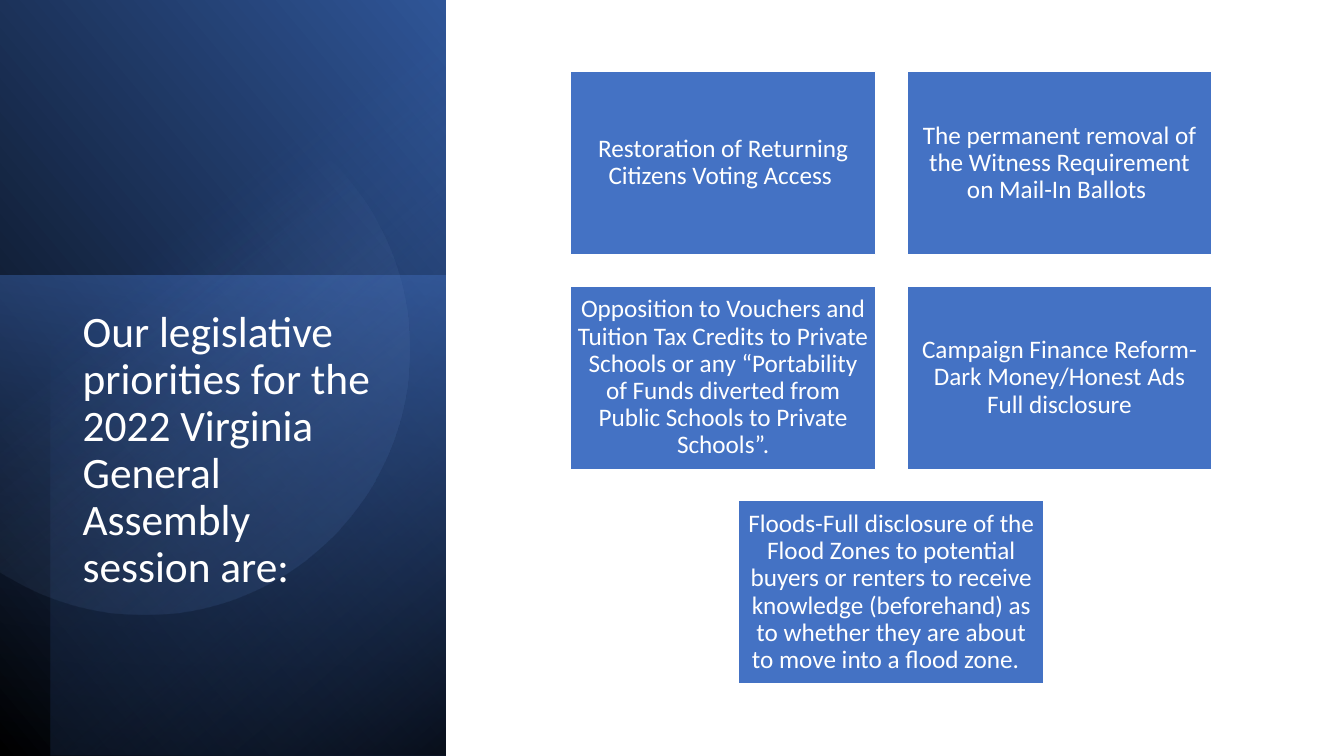
from dataclasses import dataclass
from math import acos, cos, sin

from lxml.etree import SubElement
from pptx import Presentation
from pptx.dml.color import RGBColor
from pptx.enum.shapes import MSO_SHAPE
from pptx.enum.text import MSO_ANCHOR, PP_ALIGN
from pptx.oxml.ns import qn
from pptx.util import Pt


@dataclass(frozen=True)
class Theme:
    font: str = "Calibri"
    title_size: float = 31
    card_size: float = 18
    line_spacing: float = 0.9
    white: str = "FFFFFF"
    black: str = "000000"
    blue: str = "4472C4"
    deep_blue: str = "2F5597"
    navy: str = "203864"
    pale_blue: str = "8FAADC"


class SlideBuilder:
    def __init__(self, slide, theme):
        self.shapes = slide.shapes
        self.theme = theme

    def gradient(self, shape, stops, angle):
        """Fill with (position, colour, opacity %) stops, angle clockwise."""
        shape.shadow.inherit = False
        shape.line.fill.background()
        shape.fill.gradient()
        shape.fill.gradient_angle = 360 - angle
        for stop, (position, colour, _) in zip(shape.fill.gradient_stops, stops):
            stop.position = position
            stop.color.rgb = RGBColor.from_string(colour)
        for node, (_, _, opacity) in zip(shape.element.spPr.iter(qn("a:srgbClr")), stops):
            if opacity < 100:
                SubElement(node, qn("a:alpha"), val=str(opacity * 1000))

    def gradient_panel(self, left, top, width, height, stops, angle):
        panel = self.shapes.add_shape(
            MSO_SHAPE.RECTANGLE, Pt(left), Pt(top), Pt(width), Pt(height))
        self.gradient(panel, stops, angle)

    def cut_circle(self, centre_x, centre_y, radius, stops, angle, steps=120):
        """Circle cut off by the left edge of the slide."""
        reach = acos(-centre_x / radius)
        turns = [reach * (2 * i / steps - 1) for i in range(steps + 1)]
        points = [(Pt(centre_x + radius * cos(t)), Pt(centre_y + radius * sin(t)))
                  for t in turns]
        outline = self.shapes.build_freeform(*points[0])
        outline.add_line_segments(points[1:], close=True)
        self.gradient(outline.convert_to_shape(), stops, angle)

    def set_text(self, frame, text, size, align):
        frame.word_wrap = True
        paragraph = frame.paragraphs[0]
        paragraph.text = text
        paragraph.alignment = align
        paragraph.line_spacing = self.theme.line_spacing
        paragraph.font.name = self.theme.font
        paragraph.font.size = Pt(size)
        paragraph.font.color.rgb = RGBColor.from_string(self.theme.white)

    def title(self, left, top, width, height, text):
        heading = self.shapes.add_textbox(Pt(left), Pt(top), Pt(width), Pt(height))
        self.set_text(heading.text_frame, text, self.theme.title_size, PP_ALIGN.LEFT)

    def card(self, left, top, width, height, text):
        card = self.shapes.add_shape(
            MSO_SHAPE.RECTANGLE, Pt(left), Pt(top), Pt(width), Pt(height))
        card.shadow.inherit = False
        card.fill.solid()
        card.fill.fore_color.rgb = RGBColor.from_string(self.theme.blue)
        card.line.color.rgb = RGBColor.from_string(self.theme.white)
        card.line.width = Pt(1)
        frame = card.text_frame
        frame.margin_left = frame.margin_right = Pt(5)
        frame.margin_top = frame.margin_bottom = Pt(5)
        frame.vertical_anchor = MSO_ANCHOR.MIDDLE
        self.set_text(frame, text, self.theme.card_size, PP_ALIGN.CENTER)


PRIORITIES = [
    "Restoration of Returning Citizens Voting Access ",
    "The permanent removal of the Witness Requirement on Mail-In Ballots ",
    "Opposition to Vouchers and Tuition Tax Credits to Private Schools or any "
    "“Portability of Funds diverted from Public Schools to Private Schools”.",
    "Campaign Finance Reform-Dark Money/Honest Ads Full disclosure",
    "Floods-Full disclosure of the Flood Zones to potential buyers or renters to "
    "receive knowledge (beforehand) as to whether they are about to move into a "
    "flood zone.  ",
]


def main():
    deck = Presentation()
    deck.slide_width, deck.slide_height = Pt(960), Pt(540)
    theme = Theme()
    builder = SlideBuilder(deck.slides.add_slide(deck.slide_layouts[6]), theme)

    # Layered blue side panel
    side, bottom = 318.5, 540
    builder.gradient_panel(0, 0, side, bottom,
                           [(0, theme.black, 100), (1, theme.deep_blue, 100)], 320)
    builder.gradient_panel(0, 197, side, bottom - 197,
                           [(0, theme.blue, 50), (1, theme.navy, 0)], 100)
    builder.gradient_panel(36, 0, side - 36, bottom,
                           [(0, theme.black, 59), (0.69, theme.blue, 0)], 230)
    builder.cut_circle(103, 249.5, 189.5,
                       [(0.39, theme.pale_blue, 0), (1, theme.deep_blue, 26)], 51.6)

    # Title
    builder.title(52, 218, 227, 242, "Our legislative priorities for the 2022 "
                  "Virginia General Assembly session are:")

    # Priority cards, two to a row, with a short last row centred
    left, top, width, height, gap, columns = 407.5, 51, 218, 131, 22.3, 2
    for start in range(0, len(PRIORITIES), columns):
        row = PRIORITIES[start:start + columns]
        indent = (columns - len(row)) * (width + gap) / 2
        y = top + start // columns * (height + gap)
        for column, priority in enumerate(row):
            builder.card(left + indent + column * (width + gap), y,
                         width, height, priority)

    deck.save("out.pptx")


if __name__ == "__main__":
    main()
